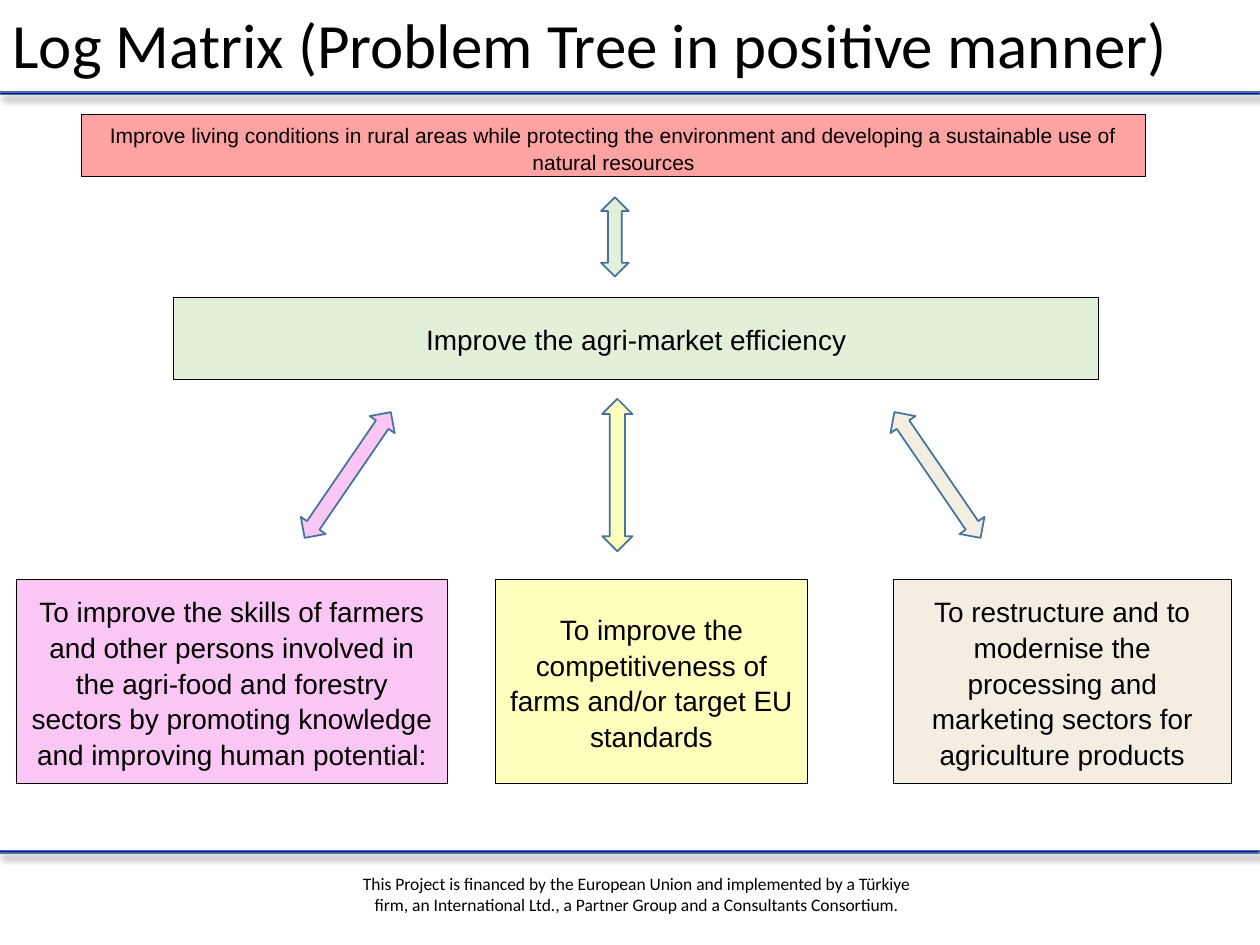
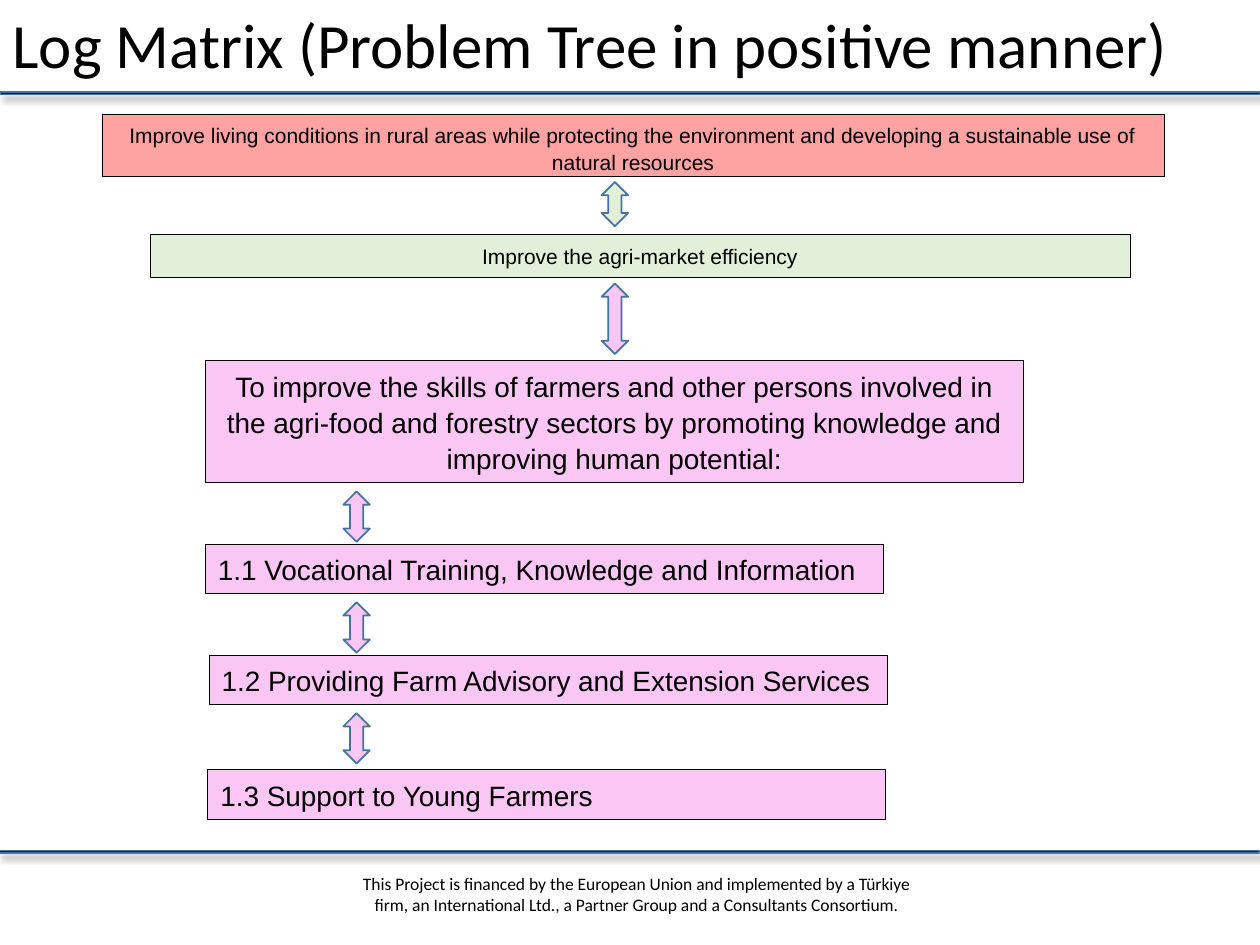
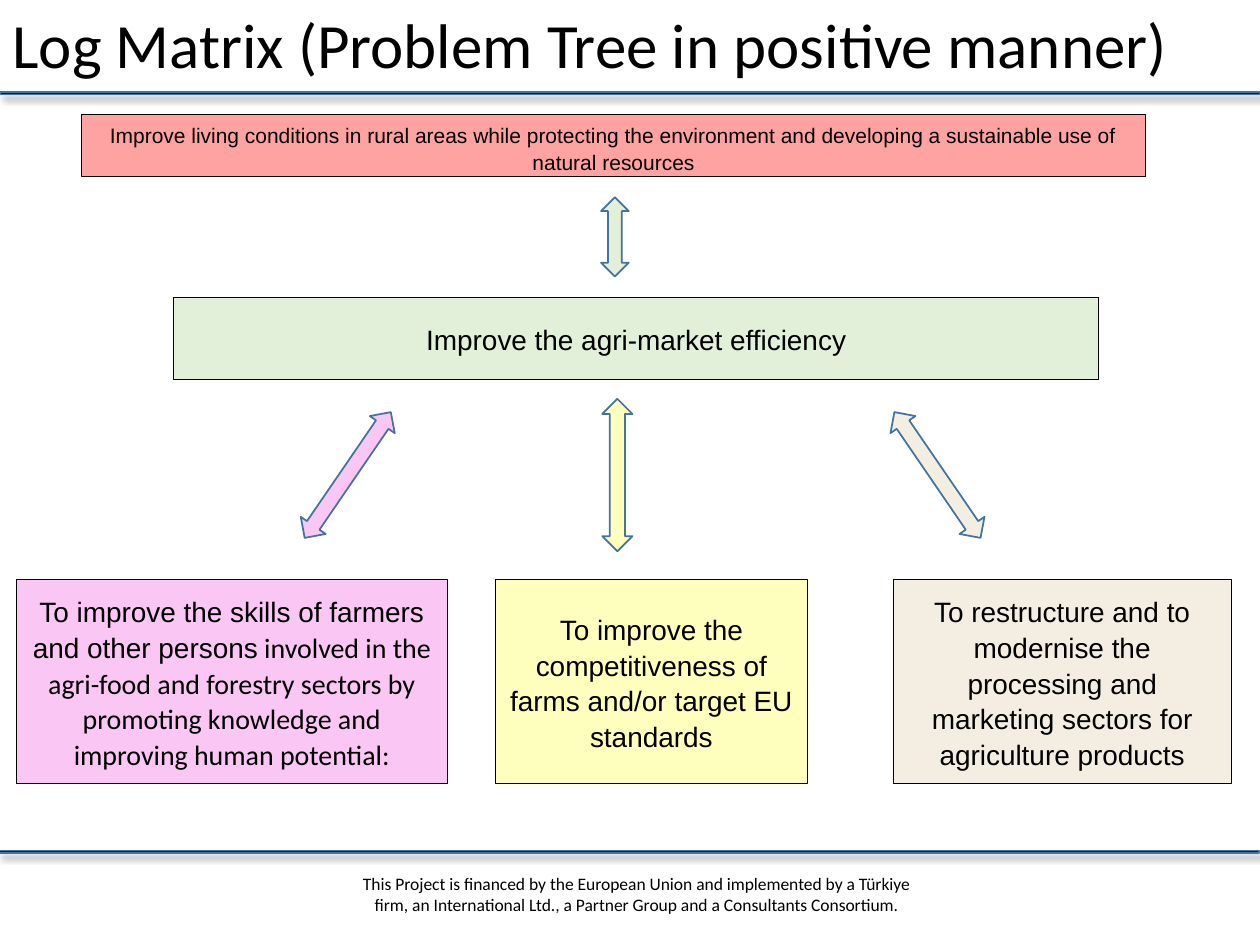
from collections import namedtuple

from lxml import etree
from pptx import Presentation
from pptx.dml.color import RGBColor
from pptx.enum.shapes import MSO_SHAPE as SHAPE
from pptx.enum.text import MSO_ANCHOR as ANCHOR, PP_ALIGN as ALIGN
from pptx.oxml.ns import qn
from pptx.util import Inches, Pt

Box = namedtuple("Box", "x y w h")

# Shared look
BLACK, BAND, EDGE = "000000", "0408B4", "43739E"
RED, GREEN, PINK, YELLOW, SAND = "FF5050", "E2F0D9", "FAC6F3", "FFFFBD", "F4EEE2"
BODY = Box(0, 0.91, 10, 5.59)

# Shared wording
TITLE = "Log Matrix (Problem Tree in positive manner)"
FOOTER = ("This Project is financed by the European Union and implemented by a Türkiye firm, "
          "an International Ltd., a Partner Group and a Consultants Consortium.")
GOAL = ("Improve living conditions in rural areas while protecting the environment "
        "and developing a sustainable use of natural resources")
PURPOSE = "Improve the agri-market efficiency"
SKILLS_START = "To improve the skills of farmers and other persons"
SKILLS_END = (" involved in the agri-food and forestry sectors by promoting knowledge "
              "and improving human potential:")
COMPETE = "To improve the competitiveness of farms and/or target EU standards"
RESTRUCTURE = ("To restructure and to modernise the processing and marketing sectors "
               "for agriculture products")
MEASURES = ["1.1 Vocational Training, Knowledge and Information",
            "1.2 Providing Farm Advisory and Extension Services",
            "1.3 Support to Young Farmers"]


def rgb(color):
    return RGBColor.from_string(color)


def inside(area, x, y, w, h):
    return Box(area.x + x, area.y + y, w, h)


def write(sp, runs, size=16, font="Arial", align=ALIGN.CENTER,
          anchor=ANCHOR.MIDDLE, spacing=1.07, after=0):
    """Fill a shape with one paragraph; runs is text or (text, font) pairs."""
    tf = sp.text_frame
    tf.word_wrap = True
    tf.vertical_anchor = anchor
    p = tf.paragraphs[0]
    p.alignment, p.line_spacing, p.space_after = align, spacing, Pt(after)
    for text, face in [(runs, font)] if isinstance(runs, str) else runs:
        r = p.add_run()
        r.text = text
        r.font.name, r.font.size, r.font.color.rgb = face, Pt(size), rgb(BLACK)


def label(s, box, text, **style):
    write(s.shapes.add_textbox(*map(Inches, box)), text, font="Calibri", **style)


def shape(s, kind, box, fill, line, weight):
    sp = s.shapes.add_shape(kind, *map(Inches, box))
    sp.shadow.inherit = False
    sp.fill.solid()
    sp.fill.fore_color.rgb = rgb(fill)
    sp.line.color.rgb = rgb(line)
    sp.line.width = Pt(weight)
    return sp


def card(s, box, fill, text, **style):
    sp = shape(s, SHAPE.RECTANGLE, box, fill, BLACK, 0.5)
    write(sp, text, **style)
    return sp


def arrow(s, area, cx, cy, length, width, fill, angle=270):
    """Double arrow centred on a point of the area."""
    box = inside(area, cx - length / 2, cy - width / 2, length, width)
    shape(s, SHAPE.LEFT_RIGHT_ARROW, box, fill, EDGE, 1).rotation = angle


def band(s, x, y):
    sp = shape(s, SHAPE.RECTANGLE, (x, y, 10, 0.02), BAND, EDGE, 1)
    effects = sp._element.spPr.find(qn("a:effectLst"))
    shadow = etree.SubElement(effects, qn("a:outerShdw"), blurRad=str(Pt(4)),
                              dist=str(Pt(3)), dir="2700000", algn="tl", rotWithShape="0")
    color = etree.SubElement(shadow, qn("a:srgbClr"), val=BLACK)
    etree.SubElement(color, qn("a:alpha"), val="40000")


def base_slide(prs):
    """Blank slide with footer, bands and title."""
    s = prs.slides.add_slide(prs.slide_layouts[6])
    label(s, (2.64, 6.88, 4.82, 0.44), FOOTER, size=10, anchor=ANCHOR.TOP, spacing=1.0)
    band(s, -0.01, 6.75)
    band(s, 0, 0.73)
    label(s, (0, 0, 10, 0.7), TITLE, size=36, align=ALIGN.LEFT,
          anchor=ANCHOR.BOTTOM, spacing=0.9)
    return s


def goal_card(s, area, x, w):
    sp = card(s, inside(area, x, 0, w, 0.49), RED, GOAL,
              size=12, anchor=ANCHOR.TOP, after=8)
    color = sp._element.spPr.find(qn("a:solidFill"))[0]
    etree.SubElement(color, qn("a:alpha"), val="53000")


def tree(s, area, skills):
    """Goal, purpose and three objectives side by side."""
    goal_card(s, area, 0.65, 8.44)
    card(s, inside(area, 1.38, 1.45, 7.34, 0.65), GREEN, PURPOSE)
    arrow(s, area, 4.88, 0.97, 0.63, 0.22, GREEN)
    objectives = [  # card left, width, fill, text, arrow centre, angle
        (0.13, 3.42, PINK, skills, 2.76, 304.4),
        (3.93, 2.48, YELLOW, COMPETE, 4.9, 270),
        (7.09, 2.68, SAND, RESTRUCTURE, 7.44, 55.6),
    ]
    for x, w, fill, text, cx, angle in objectives:
        card(s, inside(area, x, 3.69, w, 1.62), fill, text, after=8)
        arrow(s, area, cx, 2.86, 1.21, 0.24, fill, angle)


def measure_chain(s, area):
    """Goal, purpose, one objective and its measures in a column."""
    goal_card(s, area, 0.81, 8.43)
    card(s, inside(area, 1.19, 0.95, 7.78, 0.34), GREEN, PURPOSE, size=12)
    arrow(s, area, 4.88, 0.71, 0.35, 0.21, GREEN)
    card(s, inside(area, 1.63, 1.95, 6.49, 0.97), PINK, SKILLS_START + SKILLS_END, after=8)
    arrow(s, area, 4.88, 1.62, 0.56, 0.21, PINK)
    places = [(1.63, 3.41), (1.66, 4.29), (1.65, 5.2)]
    for i, ((x, y), text) in enumerate(zip(places, MEASURES)):
        card(s, inside(area, x, y, 5.38, 0.39), PINK, text,
             align=ALIGN.LEFT, anchor=ANCHOR.TOP, after=8)
        arrow(s, area, 2.83, 3.19 + 0.88 * i, 0.4, 0.21, PINK)


def main():
    prs = Presentation()
    prs.slide_width, prs.slide_height = Inches(10), Inches(7.5)
    tree(base_slide(prs), BODY, SKILLS_START + SKILLS_END)
    measure_chain(base_slide(prs), BODY)
    tree(base_slide(prs), BODY, [(SKILLS_START, "Arial"), (SKILLS_END, "Calibri")])
    prs.save("out.pptx")


if __name__ == "__main__":
    main()
